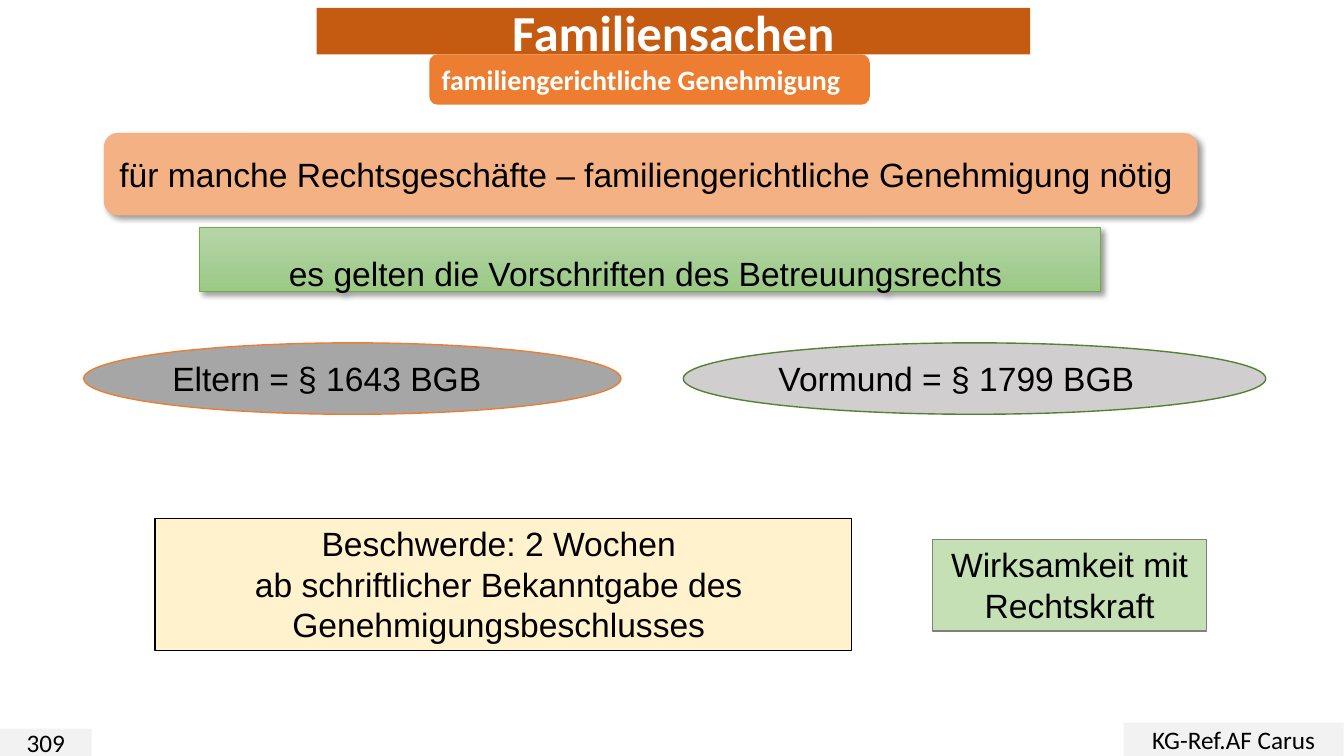
from lxml import etree
from pptx import Presentation
from pptx.dml.color import RGBColor
from pptx.enum import shapes, text
from pptx.oxml import ns
from pptx.util import Cm, Pt

KIND = shapes.MSO_SHAPE
ALIGN = text.PP_ALIGN
ANCHOR = text.MSO_ANCHOR
FIT = text.MSO_AUTO_SIZE

SIZE = (33.87, 19.05)
TITLE = dict(box=(7.98, 0.2, 17.98, 1.17), fill="C55A11", lines=["Familiensachen"],
             font=("Calibri", 36, "FFFFFF", True))
BODY = ("Arial", 24, "000000", False)
FOOT = ("Calibri", 18, "000000", False)

# Back to front
PARTS = [
    dict(kind=KIND.RECTANGLE, box=(5.03, 5.74, 22.71, 1.6), fill=("B5D5A7", "9CC987"),
         line=("70AD47", 0.5), shadow=True, grow=True, spacing=1.5,
         lines=["es gelten die Vorschriften des Betreuungsrechts "]),
    dict(kind=KIND.OVAL, box=(2.11, 8.64, 13.54, 1.8), fill="A6A6A6",
         line=("ED7D31", 1), grow=True, align=ALIGN.LEFT,
         lines=["Eltern = § 1643 BGB"]),
    dict(kind=KIND.OVAL, box=(17.22, 8.64, 14.68, 1.8), fill="D0CECE",
         line=("548235", 1), grow=True, align=ALIGN.LEFT,
         lines=["Vormund = § 1799 BGB"]),
    dict(kind=KIND.RECTANGLE, box=(3.91, 13.06, 17.55, 3.33), fill="FFF2CC",
         line=("000000", 1), grow=True,
         lines=["Beschwerde: 2 Wochen ", "ab schriftlicher Bekanntgabe des ",
                "Genehmigungsbeschlusses "]),
    dict(kind=KIND.RECTANGLE, box=(23.5, 13.59, 6.91, 2.31), fill="C5E0B4",
         line=("808080", 1), grow=True, lines=["Wirksamkeit mit Rechtskraft"]),
    dict(kind=KIND.RECTANGLE, box=(0, 18.36, 2.31, 0.69), fill="F2F2F2",
         font=FOOT, lines=["309"]),
    dict(kind=KIND.RECTANGLE, box=(28.32, 18.21, 5.54, 0.84), fill="F2F2F2",
         font=FOOT, lines=["KG-Ref.AF Carus"]),
    dict(kind=KIND.ROUNDED_RECTANGLE, box=(10.82, 1.37, 11.1, 1.27), fill="ED7D31",
         font=("Calibri", 20, "FFFFFF", True), align=ALIGN.LEFT,
         lines=["familiengerichtliche Genehmigung"]),
    dict(kind=KIND.ROUNDED_RECTANGLE, box=(2.62, 3.35, 27.56, 2.08), fill="F4B183",
         shadow=True,
         lines=["für manche Rechtsgeschäfte – familiengerichtliche Genehmigung nötig "]),
]


def color(code):
    return RGBColor.from_string(code)


def paint(shape, fill):
    """Fill with one colour, or with a pair running from top to bottom."""
    if isinstance(fill, str):
        shape.fill.solid()
        shape.fill.fore_color.rgb = color(fill)
        return
    shape.fill.gradient()
    shape.fill.gradient_angle = 270
    for stop, code in zip(shape.fill.gradient_stops, fill):
        stop.color.rgb = color(code)


def write(shape, lines, font=BODY, align=ALIGN.CENTER, grow=False, spacing=1.0):
    frame = shape.text_frame
    frame.word_wrap = True
    frame.auto_size = FIT.SHAPE_TO_FIT_TEXT if grow else FIT.NONE
    frame.vertical_anchor = ANCHOR.TOP if grow else ANCHOR.MIDDLE
    name, size, code, bold = font
    for i, line in enumerate(lines):
        para = frame.add_paragraph() if i else frame.paragraphs[0]
        para.alignment = align
        para.line_spacing = spacing
        para.space_before = Pt(0)
        run = para.add_run()
        run.text = line
        run.font.name, run.font.size, run.font.bold = name, Pt(size), bold
        run.font.color.rgb = color(code)


def shade(shape):
    """Cast a soft shadow to the lower right."""
    effects = shape._element.spPr.find(ns.qn("a:effectLst"))
    outer = etree.SubElement(effects, ns.qn("a:outerShdw"), blurRad=str(Pt(4)),
                             dist=str(Pt(3)), dir="2700000", algn="tl", rotWithShape="0")
    tint = etree.SubElement(outer, ns.qn("a:srgbClr"), val="000000")
    etree.SubElement(tint, ns.qn("a:alpha"), val="40000")


def place(shape, box):
    shape.left, shape.top, shape.width, shape.height = map(Cm, box)


def head(slide):
    """Turn the title placeholder into the rounded banner."""
    title = slide.shapes.title
    place(title, TITLE["box"])
    geom = etree.SubElement(title._element.spPr, ns.qn("a:prstGeom"), prst="roundRect")
    etree.SubElement(geom, ns.qn("a:avLst"))
    paint(title, TITLE["fill"])
    write(title, TITLE["lines"], TITLE["font"])


def draw(slide, kind, box, fill, line=None, shadow=False, **words):
    shape = slide.shapes.add_shape(kind, *map(Cm, box))
    shape.shadow.inherit = False
    paint(shape, fill)
    if line:
        shape.line.color.rgb = color(line[0])
        shape.line.width = Pt(line[1])
    else:
        shape.line.fill.background()
    if shadow:
        shade(shape)
    write(shape, **words)


def main():
    deck = Presentation()
    deck.slide_width, deck.slide_height = map(Cm, SIZE)
    slide = deck.slides.add_slide(deck.slide_layouts[5])
    head(slide)
    for part in PARTS:
        draw(slide, **part)
    deck.save("out.pptx")


if __name__ == "__main__":
    main()
